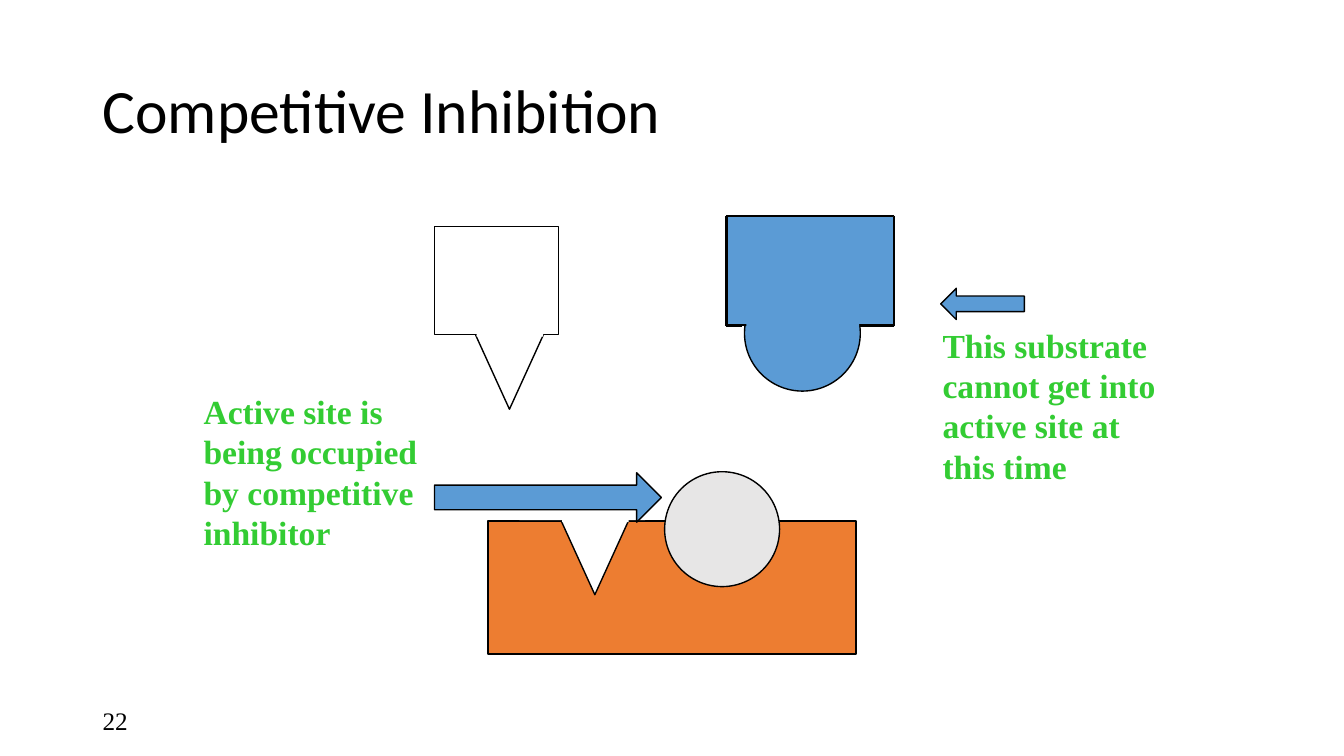
from lxml import etree
from pptx import Presentation
from pptx.dml.color import RGBColor
from pptx.enum import shapes, text
from pptx.oxml import ns
from pptx import util as u

COLORS = {"ink": "000000", "paper": "FFFFFF", "substrate": "5B9BD5",
          "enzyme": "ED7D31", "inhibitor": "E7E6E6", "label": "33CC33"}
SERIF = "Times New Roman"
KIND = shapes.MSO_SHAPE


def inches(*lengths):
    """Turn numbers into inch lengths."""
    return [u.Inches(length) for length in lengths]


def ink(line):
    """Make a line black and one point wide."""
    line.color.rgb = RGBColor.from_string(COLORS["ink"])
    line.width = u.Pt(1)


def add_preset(slide, kind, box, fill, outlined=True):
    """Add a flat preset shape, with or without an outline."""
    shape = slide.shapes.add_shape(kind, *inches(*box))
    shape.shadow.inherit = False
    shape.fill.solid()
    shape.fill.fore_color.rgb = RGBColor.from_string(COLORS[fill])
    if outlined:
        ink(shape.line)
    else:
        shape.line.fill.background()


def add_edge(slide, start, end):
    """Add a straight black line without a shadow."""
    edge = slide.shapes.add_connector(shapes.MSO_CONNECTOR.STRAIGHT,
                                      *inches(*start, *end))
    ink(edge.line)
    etree.SubElement(edge._element.spPr, ns.qn("a:effectLst"))


def add_text(slide, words, box, size, font=SERIF, color="ink", bold=False,
             anchor=text.MSO_ANCHOR.MIDDLE, spacing=None):
    """Add a wrapped text box."""
    frame = slide.shapes.add_textbox(*inches(*box)).text_frame
    frame.word_wrap = True
    frame.vertical_anchor = anchor
    paragraph = frame.paragraphs[0]
    paragraph.line_spacing = spacing
    run = paragraph.add_run()
    run.text = words
    run.font.size = u.Pt(size)
    run.font.name = font
    run.font.bold = bold
    run.font.color.rgb = RGBColor.from_string(COLORS[color])


def add_label(slide, words, box):
    """Add a green explanation."""
    add_text(slide, words, box, 24, color="label", bold=True,
             anchor=text.MSO_ANCHOR.TOP)


def draw_wedge(slide, box, outlined=True):
    """Draw a white block whose pointed foot reaches below the box."""
    left, top, width, height = box
    foot, foot_left = 0.67, left + 0.34 * width
    bottom = top + height
    add_preset(slide, KIND.DIAMOND,
               (foot_left - 0.01, bottom - 0.73, foot, 1.47), "paper")
    add_preset(slide, KIND.RECTANGLE, box, "paper", outlined)
    add_preset(slide, KIND.RECTANGLE,
               (foot_left, bottom - 0.03, foot - 0.01, 0.05), "paper", False)


def draw_round_substrate(slide, box):
    """Draw the block with a round foot, edged by lines."""
    left, top, width, height = box
    right, shoulder = left + width, top + 0.63 * height
    foot, foot_left = 0.66 * height, left + 0.11 * width
    add_preset(slide, KIND.OVAL,
               (foot_left, top + height - foot, foot, foot), "substrate")
    corners = [(left + 0.16, shoulder), (left, shoulder), (left, top),
               (right, top), (right, shoulder), (right - 0.34, shoulder)]
    for start, end in zip(corners, corners[1:]):
        add_edge(slide, start, end)
    add_preset(slide, KIND.RECTANGLE,
               (left + 0.01, top + 0.01, width - 0.02, shoulder - top - 0.02),
               "substrate")
    add_preset(slide, KIND.RECTANGLE,
               (foot_left + 0.02, shoulder - 0.05, foot - 0.03, 0.17),
               "substrate", False)


def draw_enzyme(slide, box):
    """Draw the enzyme with an open notch and the inhibitor in its site."""
    left, top, width, height = box
    add_preset(slide, KIND.RECTANGLE, box, "enzyme")
    draw_wedge(slide, (left + 0.31, top - 1.1, 1.25, 1.09), False)
    inhibitor = 1.14
    add_preset(slide, KIND.OVAL,
               (left + 0.48 * width, top - 0.49, inhibitor, inhibitor),
               "inhibitor")


def build_slide(prs):
    """Place the title, the molecules, their labels and the page number."""
    slide = prs.slides.add_slide(prs.slide_layouts[6])
    add_text(slide, "22", (0.92, 6.95, 3, 0.4), 18)
    draw_round_substrate(slide, (7.2, 2.14, 1.67, 1.74))
    draw_wedge(slide, (4.31, 2.25, 1.23, 1.07))
    draw_enzyme(slide, (4.84, 5.17, 3.65, 1.32))
    add_text(slide, "Competitive Inhibition", (0.92, 0.4, 11.5, 1.45), 44,
             font="Calibri", spacing=0.9)
    add_label(slide, "Active site is being occupied by competitive inhibitor",
              (1.92, 3.83, 2.58, 1.72))
    add_preset(slide, KIND.RIGHT_ARROW, (4.31, 4.69, 2.25, 0.49), "substrate")
    add_label(slide, "This substrate cannot get into active site at this time",
              (9.25, 3.17, 2.42, 1.72))
    add_preset(slide, KIND.LEFT_ARROW, (9.33, 2.86, 0.83, 0.31), "substrate")


def main():
    """Build and save the presentation."""
    prs = Presentation()
    prs.slide_width, prs.slide_height = inches(13.33, 7.5)
    build_slide(prs)
    prs.save("out.pptx")


if __name__ == "__main__":
    main()
